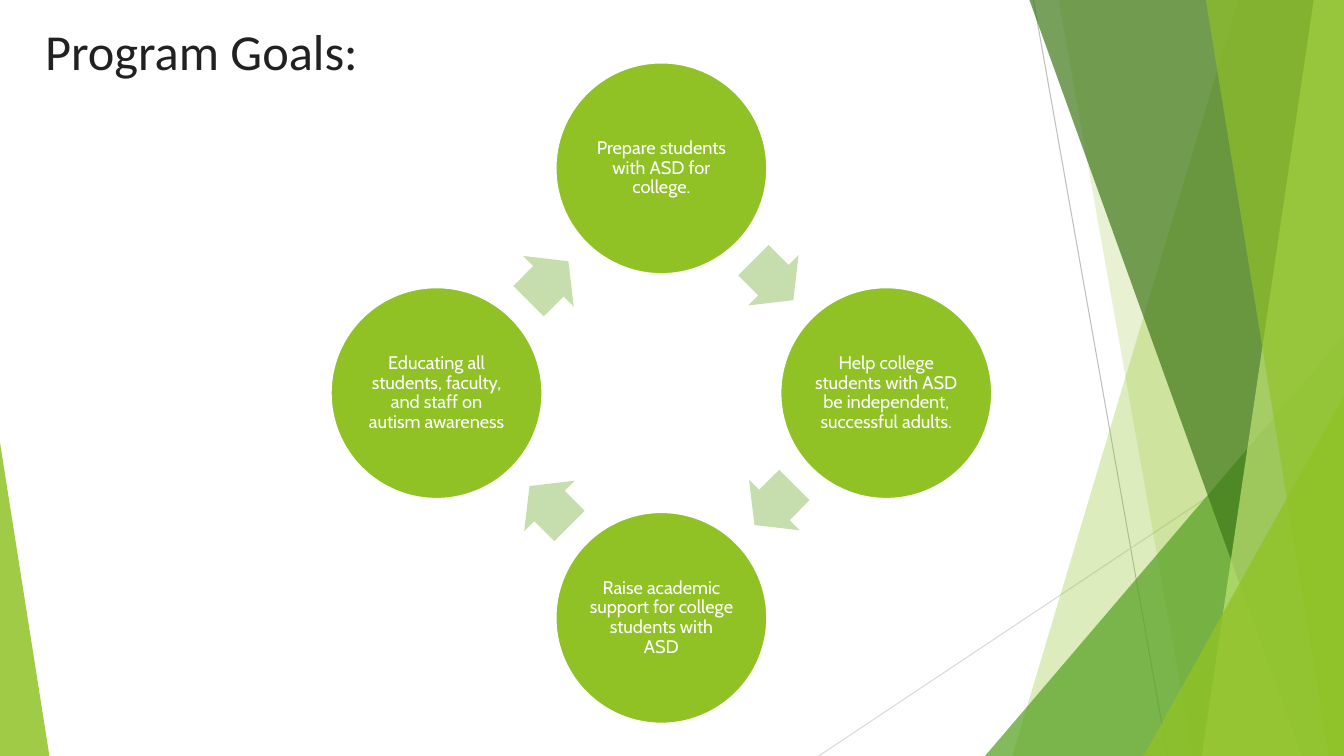
import pptx
import pptx.util
import pptx.dml.color
import pptx.enum.shapes
import pptx.enum.text
import pptx.oxml.ns
import pptx.oxml.xmlchemy

Inches = pptx.util.Inches
RGBColor = pptx.dml.color.RGBColor
Shapes = pptx.enum.shapes.MSO_SHAPE

LIME = RGBColor(0x90, 0xC2, 0x26)
GREEN = RGBColor(0x54, 0xA0, 0x21)
DARK_GREEN = RGBColor(0x3F, 0x78, 0x19)
PALE_LIME = RGBColor(0xC0, 0xE4, 0x74)
ARROW_GREEN = RGBColor(0xC6, 0xDD, 0xAD)
GREY = RGBColor(0xBF, 0xBF, 0xBF)
LIGHT_GREY = RGBColor(0xD9, 0xD9, 0xD9)
INK = RGBColor(0x21, 0x21, 0x21)
WHITE = RGBColor(0xFF, 0xFF, 0xFF)

WIDTH, HEIGHT = 13.33, 7.5

GOALS = [
    "Prepare students with ASD for college.",
    "Help college students with ASD be independent, successful adults.",
    "Raise academic support for college students with\vASD",
    "Educating all students, faculty, and staff on autism awareness",
]


def paint(shape, color, opacity=100):
    """Flat fill without outline or shadow; opacity in percent."""
    shape.shadow.inherit = False
    shape.fill.solid()
    shape.fill.fore_color.rgb = color
    shape.line.fill.background()
    if opacity < 100:
        fill = shape._element.spPr.find(pptx.oxml.ns.qn("a:solidFill"))
        alpha = pptx.oxml.xmlchemy.OxmlElement("a:alpha")
        alpha.set("val", str(opacity * 1000))
        fill[0].append(alpha)


def add_ray(page, start, end, color):
    ray = page.shapes.add_connector(
        pptx.enum.shapes.MSO_CONNECTOR.STRAIGHT,
        *(Inches(value) for value in start + end))
    ray.line.color.rgb = color
    ray.line.width = pptx.util.Pt(0.75)
    ray._element.spPr.append(pptx.oxml.xmlchemy.OxmlElement("a:effectLst"))


def add_band(page, right, top_x, bottom_x, color, opacity):
    """Full-height band from a slanted left edge to the right side."""
    builder = page.shapes.build_freeform(Inches(top_x), 0)
    builder.add_line_segments(
        [(Inches(right), 0), (Inches(right), Inches(HEIGHT)),
         (Inches(bottom_x), Inches(HEIGHT))], close=True)
    paint(builder.convert_to_shape(), color, opacity)


def add_wedge(page, left, width, height, tip, color, opacity):
    """Triangle standing on the bottom edge of the slide."""
    wedge = page.shapes.add_shape(
        Shapes.ISOSCELES_TRIANGLE, Inches(left), Inches(HEIGHT - height),
        Inches(width), Inches(height))
    wedge.adjustments[0] = tip
    paint(wedge, color, opacity)


def add_backdrop(page, right):
    add_ray(page, (10.25, 0), (11.58, HEIGHT), GREY)
    add_ray(page, (right, 4.03), (8.12, HEIGHT), LIGHT_GREY)
    add_band(page, right, 12.28, 10.04, LIME, 30)
    add_band(page, right, 10.5, 11.83, LIME, 20)
    add_wedge(page, right - 3.56, 3.56, 4.17, 1, GREEN, 72)
    add_band(page, right, 10.21, 12.91, DARK_GREEN, 70)
    add_band(page, right, 13.03, 11.92, PALE_LIME, 70)
    add_band(page, right, 11.96, 13.18, LIME, 65)
    add_wedge(page, right - 1.99, 1.99, 3.57, 1, LIME, 80)
    add_wedge(page, 0, 0.49, 3.11, 0, LIME, 85)


def set_font(para, name, size, color):
    para.font.name = name
    para.font.size = pptx.util.Pt(size)
    para.font.color.rgb = color


def add_title(page, left, top, width, height):
    box = page.shapes.add_textbox(*map(Inches, (left, top, width, height)))
    box.text_frame.word_wrap = True
    para = box.text_frame.paragraphs[0]
    para.text = "Program Goals:"
    set_font(para, "Calibri", 36, INK)


def add_centered(page, kind, x, y, width, height):
    return page.shapes.add_shape(
        kind, Inches(x - width / 2), Inches(y - height / 2),
        Inches(width), Inches(height))


def add_goal(page, x, y, text):
    circle = add_centered(page, Shapes.OVAL, x, y, 2.1, 2.1)
    paint(circle, LIME)
    circle.line.color.rgb = WHITE
    circle.line.width = pptx.util.Pt(1.5)
    frame = circle.text_frame
    frame.word_wrap = True
    frame.vertical_anchor = pptx.enum.text.MSO_ANCHOR.MIDDLE
    frame.margin_left = frame.margin_right = Inches(0.02)
    frame.margin_top = frame.margin_bottom = Inches(0.02)
    para = frame.paragraphs[0]
    para.text = text
    para.alignment = pptx.enum.text.PP_ALIGN.CENTER
    para.line_spacing = 0.9
    set_font(para, "Cabin", 13, WHITE)


def add_cycle(page, left, top, size):
    """Goals on a ring, clockwise from the top, with an arrow after each."""
    center_x, center_y = left + size / 2, top + size / 2
    goal_x, goal_y = 0, 1.05 - size / 2
    arrow_x, arrow_y = 1.11, -1.12
    for index, text in enumerate(GOALS):
        add_goal(page, center_x + goal_x, center_y + goal_y, text)
        arrow = add_centered(page, Shapes.RIGHT_ARROW, center_x + arrow_x,
                             center_y + arrow_y, 0.56, 0.71)
        arrow.adjustments[0] = 0.6
        arrow.adjustments[1] = 0.5
        arrow.rotation = 45 + 90 * index
        paint(arrow, ARROW_GREEN)
        # Quarter turn clockwise
        goal_x, goal_y = -goal_y, goal_x
        arrow_x, arrow_y = -arrow_y, arrow_x


def main():
    deck = pptx.Presentation()
    deck.slide_width, deck.slide_height = Inches(WIDTH), Inches(HEIGHT)
    page = deck.slides.add_slide(deck.slide_layouts[6])
    add_backdrop(page, WIDTH)
    add_title(page, 0.35, 0.15, 9.4, 1.44)
    add_cycle(page, 3.28, 0.62, 6.56)
    deck.save("out.pptx")


if __name__ == "__main__":
    main()
